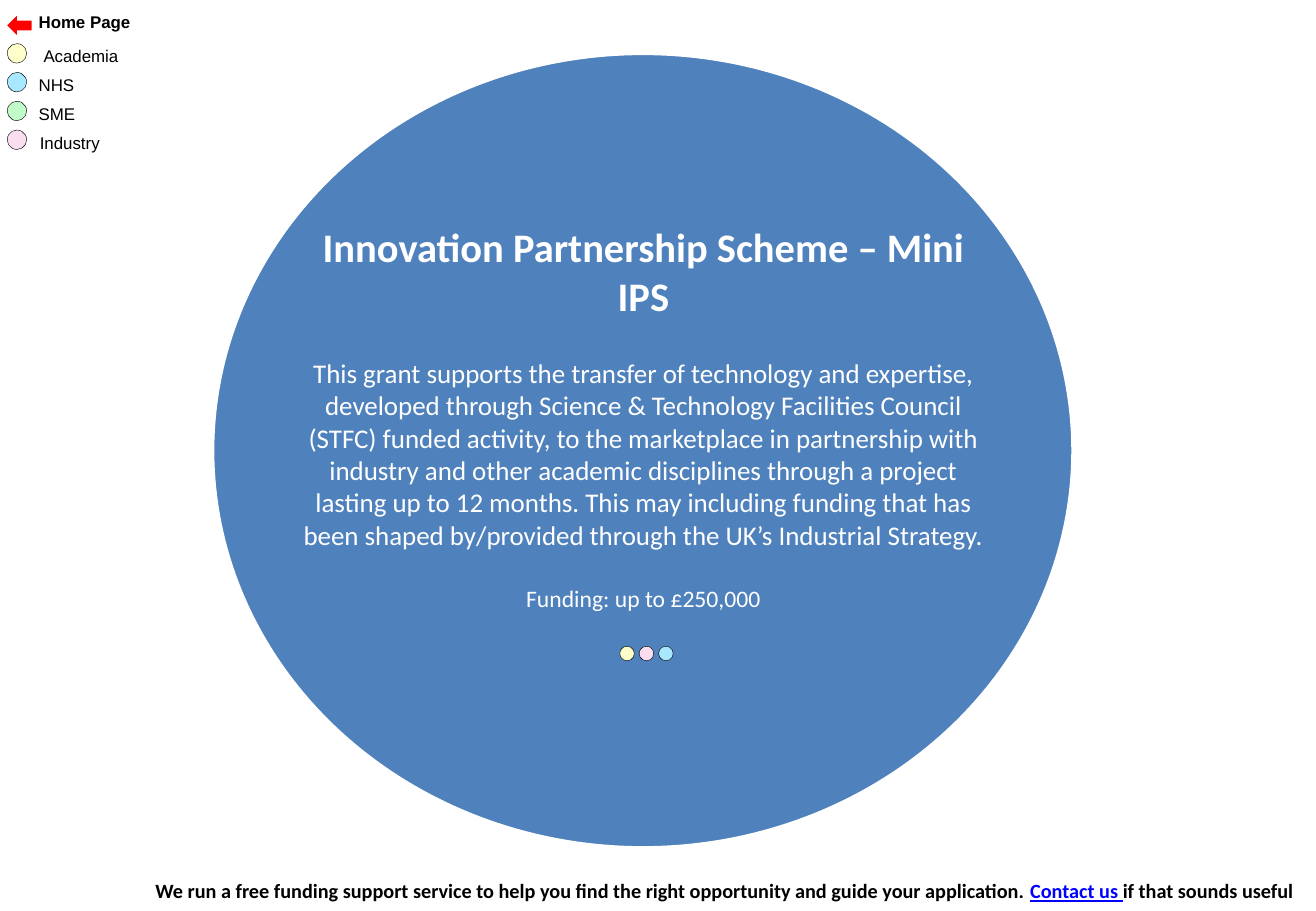
from dataclasses import dataclass

from pptx import Presentation
from pptx.dml.color import RGBColor
from pptx.enum.shapes import MSO_SHAPE
from pptx.enum.text import PP_ALIGN
from pptx.util import Inches, Pt

ELLIPSE = MSO_SHAPE.OVAL
LEFT_ARROW = MSO_SHAPE.LEFT_ARROW
LEFT = PP_ALIGN.LEFT
CENTER = PP_ALIGN.CENTER


@dataclass(frozen=True)
class Theme:
    black: str = "000000"
    white: str = "FFFFFF"
    link: str = "0000FF"
    arrow: str = "FF0000"
    circle: str = "4F81BD"
    academia: str = "FFFFCC"
    nhs: str = "A7E8FF"
    sme: str = "C1FBC9"
    industry: str = "FBDDF0"
    legend_font: str = "Arial"
    body_font: str = "Calibri"
    legend_size: int = 10
    footer_size: int = 12
    title_size: int = 24
    body_size: int = 16
    funding_size: int = 14
    dot_line: float = 0.25
    circle_line: float = 2


class SlideBuilder:
    cell = Inches(0.1)

    def __init__(self, slide, theme):
        self.slide = slide
        self.theme = theme

    def place(self, *grid_box):
        return [round(value * self.cell) for value in grid_box]

    def shape(self, kind, grid_box, fill, line=None, line_width=0):
        shape = self.slide.shapes.add_shape(kind, *self.place(*grid_box))
        shape.shadow.inherit = False
        shape.fill.solid()
        shape.fill.fore_color.rgb = RGBColor.from_string(fill)
        if line:
            shape.line.color.rgb = RGBColor.from_string(line)
            shape.line.width = Pt(line_width)
        else:
            shape.line.fill.background()

    def dot(self, left, top, size, fill):
        self.shape(ELLIPSE, (left, top, size, size), fill, self.theme.black, self.theme.dot_line)

    def text_box(self, grid_box, wrap=True):
        frame = self.slide.shapes.add_textbox(*self.place(*grid_box)).text_frame
        frame.word_wrap = wrap
        return frame

    def style(self, paragraph, font, size, color, bold=False, align=LEFT, before=0):
        paragraph.alignment = align
        if before:
            paragraph.space_before = Pt(before)
        paragraph.font.name = font
        paragraph.font.size = Pt(size)
        paragraph.font.bold = bold
        paragraph.font.color.rgb = RGBColor.from_string(color)

    def label(self, text, left, top, width, bold=False):
        paragraph = self.text_box((left, top, width, 2.7), wrap=False).paragraphs[0]
        paragraph.text = text
        self.style(paragraph, self.theme.legend_font, self.theme.legend_size, self.theme.black, bold)

    def legend(self, entries, dot_top, label_top, step):
        for index, (text, fill, left, width) in enumerate(entries):
            self.dot(0.6, dot_top + index * step, 1.6, fill)
            self.label(text, left, label_top + index * step, width)

    def description(self, grid_box, entries):
        frame = self.text_box(grid_box)
        for index, (text, size, bold, before) in enumerate(entries):
            paragraph = frame.add_paragraph() if index else frame.paragraphs[0]
            paragraph.text = text
            self.style(paragraph, self.theme.body_font, size, self.theme.white, bold, CENTER, before)

    def footer(self, grid_box, before_link, link, after_link):
        paragraph = self.text_box(grid_box).paragraphs[0]
        self.style(paragraph, self.theme.body_font, self.theme.footer_size, self.theme.black, True)
        for text in (before_link, link, after_link):
            run = paragraph.add_run()
            run.text = text
            if text == link:
                run.font.underline = True
                run.font.color.rgb = RGBColor.from_string(self.theme.link)


def main():
    theme = Theme()
    presentation = Presentation()
    presentation.slide_width = Inches(10.83)
    presentation.slide_height = Inches(7.5)
    slide = presentation.slides.add_slide(presentation.slide_layouts[6])
    builder = SlideBuilder(slide, theme)

    builder.footer(
        (11.8, 71.8, 96.6, 3.1),
        "We run a free funding support service to help you find the right opportunity "
        "and guide your application. ",
        "Contact us ",
        "if that sounds useful",
    )
    builder.shape(LEFT_ARROW, (0.6, 1.3, 2, 1.6), theme.arrow)
    builder.label("Home Page", 2.2, 0.5, 9.6, bold=True)
    builder.legend(
        [
            ("Academia", theme.academia, 2.6, 8.2),
            ("NHS", theme.nhs, 2.2, 5),
            ("SME", theme.sme, 2.2, 5.1),
            ("Industry", theme.industry, 2.3, 7),
        ],
        dot_top=3.6, label_top=3.3, step=2.37,
    )

    builder.shape(ELLIPSE, (17.5, 4.4, 70.8, 65.4), theme.circle, theme.white, theme.circle_line)
    builder.description(
        (23.5, 17.8, 58.9, 33.4),
        [
            ("Innovation Partnership Scheme – Mini IPS", theme.title_size, True, 0),
            (
                "This grant supports the transfer of technology and expertise, developed through "
                "Science & Technology Facilities Council (STFC) funded activity, to the marketplace "
                "in partnership with industry and other academic disciplines through a project "
                "lasting up to 12 months. This may including funding that has been shaped "
                "by/provided through the UK’s Industrial Strategy.",
                theme.body_size, False, 22,
            ),
            ("Funding: up to £250,000", theme.funding_size, False, 19.5),
        ],
    )
    for index, fill in enumerate((theme.academia, theme.industry, theme.nhs)):
        builder.dot(51 + index * 1.6, 53.2, 1.2, fill)

    presentation.save("out.pptx")


if __name__ == "__main__":
    main()
